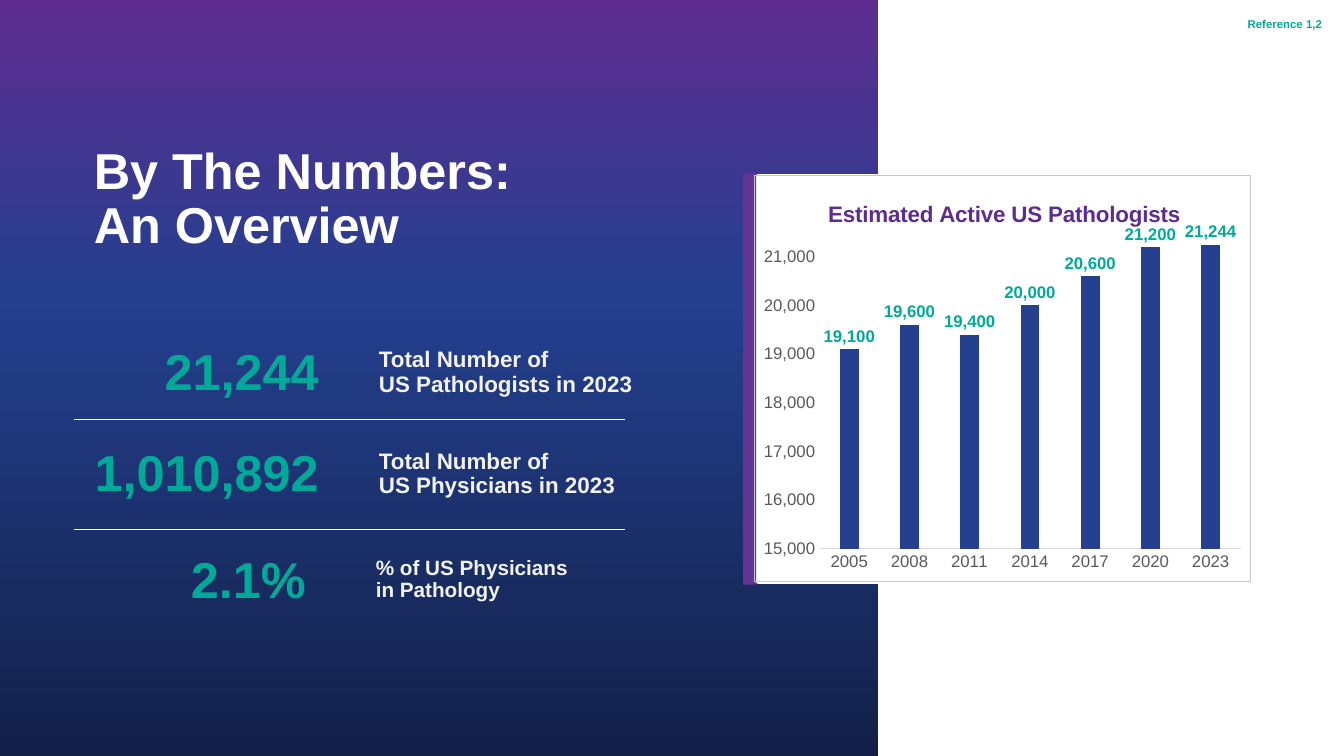
from copy import deepcopy
from dataclasses import dataclass

from lxml.etree import SubElement
from pptx import Presentation
from pptx.chart.data import CategoryChartData
from pptx.dml.color import RGBColor
from pptx.enum.chart import XL_CHART_TYPE as Kind, XL_LABEL_POSITION as Spot
from pptx.enum.chart import XL_TICK_MARK as Tick
from pptx.enum.shapes import MSO_CONNECTOR as Link, MSO_SHAPE as Form
from pptx.enum.text import MSO_ANCHOR as Anchor, PP_ALIGN as Align
from pptx.oxml import parse_xml
from pptx.oxml.ns import nsdecls, qn
from pptx.util import Inches, Pt


@dataclass(frozen=True)
class Theme:
    font: str = "Arial"
    white: str = "FFFFFF"
    pale: str = "F2F2F2"
    teal: str = "00A998"
    purple: str = "5E2C91"
    plum: str = "643694"
    blue: str = "24408F"
    navy: str = "122048"
    gray: str = "595959"
    rule: str = "D9D9D9"
    edge: str = "C7C7C7"
    big: float = 36
    label: float = 16
    small: float = 14.8
    note: float = 14
    axis: float = 12


def rgb(code):
    return RGBColor.from_string(code)


def box(*nums):
    return [Inches(n) for n in nums]


class Deck:
    def __init__(self, theme):
        self.theme = theme
        self.prs = Presentation()
        self.prs.slide_width, self.prs.slide_height = box(13.33, 7.5)
        self.slide = self.prs.slides.add_slide(self.prs.slide_layouts[5])
        self.shapes = self.slide.shapes

    def style(self, font, size, color, bold=True):
        font.name, font.size, font.bold = self.theme.font, Pt(size), bold
        font.color.rgb = rgb(color)

    def fill(self, frame, lines, size, color, align=Align.LEFT, space=1.0):
        frame.word_wrap = True
        para = frame.paragraphs[0]
        para.alignment, para.line_spacing = align, space
        for i, line in enumerate(lines):
            if i:
                para.add_line_break()
            run = para.add_run()
            run.text = line
            self.style(run.font, size, color)
        return para

    def title(self, at, lines):
        head = self.shapes.title
        head.left, head.top, head.width, head.height = box(*at)
        head.text_frame.vertical_anchor = Anchor.MIDDLE
        self.fill(head.text_frame, lines, self.theme.big, self.theme.white, space=0.9)
        # Bring the title above the backdrop
        head.element.getparent().append(head.element)

    def text(self, at, lines, size, color, **look):
        frame = self.shapes.add_textbox(*box(*at)).text_frame
        return self.fill(frame, lines, size, color, **look)

    def rect(self, at, color, line=None):
        shape = self.shapes.add_shape(Form.RECTANGLE, *box(*at))
        shape.shadow.inherit = False
        shape.fill.solid()
        shape.fill.fore_color.rgb = rgb(color)
        if line:
            shape.line.color.rgb = rgb(color)
            shape.line.width = Pt(line)
        else:
            shape.line.fill.background()
        return shape

    def fade(self, at, stops):
        shape = self.rect(at, stops[0][1])
        shape.fill.gradient()
        shape.fill.gradient_angle = 270
        marks = shape.element.find(".//" + qn("a:gsLst"))
        while len(marks) < len(stops):
            marks.append(deepcopy(marks[0]))
        for mark, (place, color) in zip(shape.fill.gradient_stops, stops):
            mark.position = place
            mark.color.rgb = rgb(color)

    def line(self, left, right, top):
        rule = self.shapes.add_connector(Link.STRAIGHT, *box(left, top, right, top))
        rule.line.color.rgb = rgb(self.theme.white)
        rule.line.width = Pt(1)
        SubElement(rule.element.spPr, qn("a:effectLst"))

    def place(self, **spots):
        parts = "".join(f'<c:{key} val="{val}"/>' for key, val in spots.items())
        inner = '<c:layoutTarget val="inner"/>' if "w" in spots else ""
        return parse_xml(
            f'<c:layout {nsdecls("c")}><c:manualLayout>{inner}<c:xMode val="edge"/>'
            f'<c:yMode val="edge"/>{parts}</c:manualLayout></c:layout>')

    def chart(self, at, head, cats, vals):
        t = self.theme
        data = CategoryChartData(number_format="#,##0")
        data.categories = cats
        data.add_series("Series 1", vals)
        chart = self.shapes.add_chart(Kind.COLUMN_CLUSTERED, *box(*at), data).chart
        self.style(chart.font, t.axis, t.gray, False)
        chart.has_legend = False

        # Heading
        chart.has_title = True
        run = chart.chart_title.text_frame.paragraphs[0].add_run()
        run.text = head
        self.style(run.font, t.label, t.purple)

        # Axes
        for axis in (chart.category_axis, chart.value_axis):
            axis.major_tick_mark = axis.minor_tick_mark = Tick.NONE
            axis.has_major_gridlines = False
            self.style(axis.tick_labels.font, t.axis, t.gray, False)
        chart.category_axis.format.line.color.rgb = rgb(t.rule)
        chart.category_axis.format.line.width = Pt(0.75)
        axis = chart.value_axis
        axis.format.line.fill.background()
        axis.minimum_scale, axis.maximum_scale = 15000, 21500
        axis.major_unit = 1000
        axis.tick_labels.number_format = "#,##0"
        axis.tick_labels.number_format_is_linked = False

        # Columns and their labels
        plot = chart.plots[0]
        plot.gap_width, plot.overlap = 219, -27
        plot.vary_by_categories = False
        bars = plot.series[0]
        bars.format.fill.solid()
        bars.format.fill.fore_color.rgb = rgb(t.blue)
        tags = bars.data_labels
        tags.show_value, tags.position = True, Spot.OUTSIDE_END
        self.style(tags.font, t.axis, t.teal)

        # Layout and border
        root = chart.element.find(qn("c:chart"))
        name, area = root.find(qn("c:title")), root.find(qn("c:plotArea"))
        for part in (name, area):
            for old in part.findall(qn("c:layout")):
                part.remove(old)
        name.find(qn("c:tx")).addnext(self.place(x=0.14, y=0.05))
        area.insert(0, self.place(x=0.13, y=0.14, w=0.85, h=0.78))
        root.addnext(parse_xml(
            f'<c:spPr {nsdecls("c", "a")}><a:noFill/><a:ln w="{Pt(0.75)}"><a:solidFill>'
            f'<a:srgbClr val="{t.edge}"/></a:solidFill></a:ln></c:spPr>'))


def main():
    t = Theme()
    deck = Deck(t)

    # Backdrop
    deck.fade((0, 0, 8.71, 7.52), [(0, t.purple), (0.39, t.blue), (1, t.navy)])
    deck.rect((7.52, 1.76, 3.99, 4), t.white, 5)
    deck.rect((7.37, 1.72, 0.13, 4.08), t.plum)

    # Title
    deck.title((0.83, 1.26, 5.38, 1.45), ["By The Numbers: ", "An Overview"])

    # Chart
    deck.chart((7.48, 1.74, 4.93, 4.03), "Estimated Active US Pathologists",
               ["2005", "2008", "2011", "2014", "2017", "2020", "2023"],
               [19100, 19600, 19400, 20000, 20600, 21200, 21244])

    # Key figures: top, right edge, value, label left and width, size, lines
    facts = [
        (3.32, 3.26, "21,244", 3.66, 3.21, t.label,
         ["Total Number of ", "US Pathologists in 2023"]),
        (4.33, 3.26, "1,010,892", 3.66, 3.21, t.label,
         ["Total Number of ", "US Physicians in 2023"]),
        (5.39, 3.13, "2.1%", 3.63, 2.23, t.small,
         ["% of US Physicians in Pathology"]),
    ]
    for top, right, value, left, width, size, lines in facts:
        deck.text((right - 2.55, top, 2.55, 0.71), [value], t.big, t.teal, align=Align.RIGHT)
        deck.text((left, top + 0.09, width, 0.58), lines, size, t.pale, space=0.9)
    for top in (4.16, 5.25):
        deck.line(0.73, 6.2, top)

    # Reference mark
    para = deck.text((11.21, 0.12, 2, 0.28), ["Reference 1,2"], t.note, t.teal,
                     align=Align.RIGHT, space=0.9)
    para.runs[0].font._element.set("baseline", "30000")

    deck.prs.save("out.pptx")


if __name__ == "__main__":
    main()
